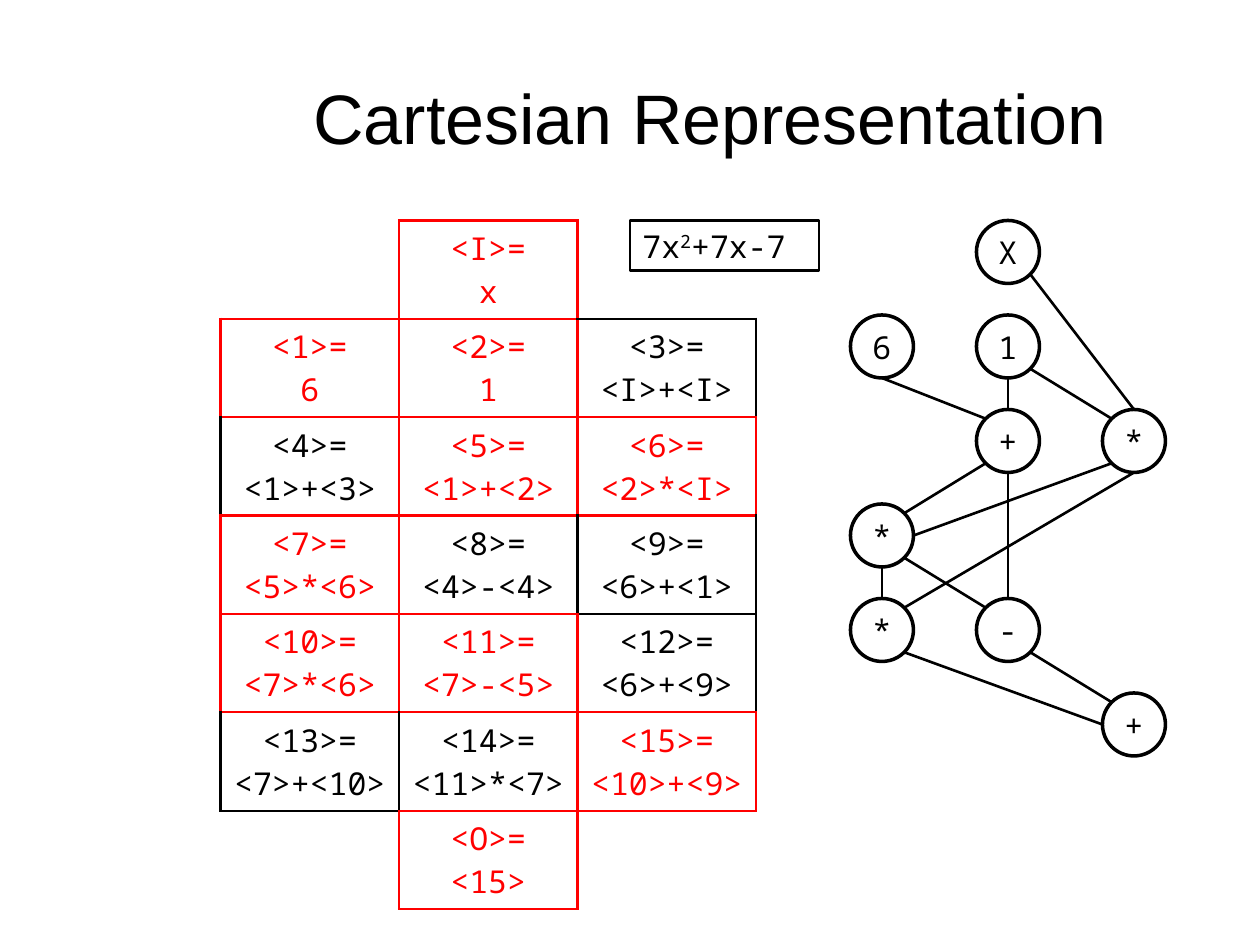
from dataclasses import dataclass
from math import sqrt

from lxml.etree import SubElement
from pptx import Presentation
from pptx.dml.color import RGBColor
from pptx.enum.shapes import MSO_CONNECTOR, MSO_SHAPE
from pptx.enum.text import MSO_ANCHOR, PP_ALIGN
from pptx.oxml.ns import qn
from pptx.util import Inches, Pt


@dataclass(frozen=True)
class Theme:
    ink: RGBColor = RGBColor(0, 0, 0)
    active: RGBColor = RGBColor(255, 0, 0)
    paper: RGBColor = RGBColor(255, 255, 255)
    title_font: str = "Arial"
    code_font: str = "Noto Sans Mono"
    title_size: Pt = Pt(40)
    code_size: Pt = Pt(18)
    thin: Pt = Pt(1.5)
    thick: Pt = Pt(2)


THEME = Theme()

ACTIVE_NODES = {"I", "1", "2", "5", "6", "7", "10", "11", "15", "O"}
GRID = [
    [None, ("I", "x"), None],
    [("1", "6"), ("2", "1"), ("3", "<I>+<I>")],
    [("4", "<1>+<3>"), ("5", "<1>+<2>"), ("6", "<2>*<I>")],
    [("7", "<5>*<6>"), ("8", "<4>-<4>"), ("9", "<6>+<1>")],
    [("10", "<7>*<6>"), ("11", "<7>-<5>"), ("12", "<6>+<9>")],
    [("13", "<7>+<10>"), ("14", "<11>*<7>"), ("15", "<10>+<9>")],
    [None, ("O", "<15>"), None],
]
# Border tag and the (row, column) step to the neighbour it is shared with
SIDES = {"a:lnL": (0, -1), "a:lnR": (0, 1), "a:lnT": (-1, 0), "a:lnB": (1, 0)}

# Node name: (symbol, column, row)
GRAPH_NODES = {
    "input": ("X", 1, 0), "six": ("6", 0, 1), "one": ("1", 1, 1),
    "sum": ("+", 1, 2), "scaled": ("*", 2, 2), "product": ("*", 0, 3),
    "power": ("*", 0, 4), "difference": ("-", 1, 4), "output": ("+", 2, 5),
}
# Start node and side, end node and side, sides as compass points
GRAPH_EDGES = [
    ("input", "SE", "scaled", "N"), ("one", "S", "sum", "N"),
    ("six", "S", "sum", "NW"), ("one", "SE", "scaled", "NW"),
    ("sum", "SW", "product", "NE"), ("scaled", "SW", "product", "E"),
    ("product", "S", "power", "N"), ("scaled", "S", "power", "NE"),
    ("product", "SE", "difference", "NW"), ("sum", "S", "difference", "N"),
    ("difference", "SE", "output", "NW"), ("power", "SE", "output", "W"),
]


def format_code(para, color=THEME.ink, align=PP_ALIGN.CENTER):
    para.alignment = align
    for span in para.runs:
        span.font.name = THEME.code_font
        span.font.size = THEME.code_size
        span.font.bold = False
        span.font.color.rgb = color


def add_outlined(page, kind, box, width):
    shape = page.shapes.add_shape(kind, *box)
    shape.shadow.inherit = False
    shape.line.color.rgb = THEME.ink
    shape.line.width = width
    return shape


def place_title(page, box):
    title = page.shapes.title
    title.left, title.top, title.width, title.height = box
    frame = title.text_frame
    frame.text = "Cartesian Representation"
    frame.vertical_anchor = MSO_ANCHOR.MIDDLE
    para = frame.paragraphs[0]
    para.alignment = PP_ALIGN.CENTER
    font = para.runs[0].font
    font.name, font.size = THEME.title_font, THEME.title_size
    font.color.rgb = THEME.ink


def entry_color(row, column):
    """Colour of a grid entry, or None for an empty place or one outside."""
    if not (0 <= row < len(GRID) and 0 <= column < len(GRID[0])):
        return None
    entry = GRID[row][column]
    if entry is None:
        return None
    return THEME.active if entry[0] in ACTIVE_NODES else THEME.ink


def add_borders(cell, row, column):
    """Shared borders are red beside an active node, otherwise black."""
    for tag, (down, right) in SIDES.items():
        colors = (entry_color(row, column), entry_color(row + down, column + right))
        line = SubElement(cell._tc.get_or_add_tcPr(), qn(tag), w=str(THEME.thin))
        if not any(colors):
            SubElement(line, qn("a:noFill"))
            continue
        color = THEME.active if THEME.active in colors else THEME.ink
        fill = SubElement(line, qn("a:solidFill"))
        SubElement(fill, qn("a:srgbClr"), val=str(color))


def place_grid(page, box):
    table = page.shapes.add_table(len(GRID), len(GRID[0]), *box).table
    table.first_row = table.horz_banding = False
    for row, entries in enumerate(GRID):
        for column, entry in enumerate(entries):
            cell = table.cell(row, column)
            add_borders(cell, row, column)
            cell.fill.background()
            cell.vertical_anchor = MSO_ANCHOR.MIDDLE
            if entry:
                name, value = entry
                cell.text_frame.text = f"<{name}>=\n{value}"
                for para in cell.text_frame.paragraphs:
                    format_code(para, entry_color(row, column))


def place_formula(page, box):
    shape = add_outlined(page, MSO_SHAPE.RECTANGLE, box, THEME.thin)
    shape.fill.background()
    frame = shape.text_frame
    frame.vertical_anchor = MSO_ANCHOR.TOP
    para = frame.paragraphs[0]
    for text in ("7x", "2", "+7x-7"):
        para.add_run().text = text
    format_code(para, align=PP_ALIGN.LEFT)
    para.runs[1]._r.get_or_add_rPr().set("baseline", "30000")


def rim_point(node, side):
    """Point on a circle's edge in a compass direction."""
    across = ("E" in side) - ("W" in side)
    down = ("S" in side) - ("N" in side)
    reach = node.width / 2 / sqrt(len(side))
    return (int(node.left + node.width / 2 + across * reach),
            int(node.top + node.height / 2 + down * reach))


def place_graph(page, box):
    left, top, width, height = box
    size = Inches(0.5)
    column_step = (width - size) // 2
    row_step = (height - size) // 5
    nodes = {}
    for name, (symbol, column, row) in GRAPH_NODES.items():
        spot = (left + column * column_step, top + row * row_step, size, size)
        node = nodes[name] = add_outlined(page, MSO_SHAPE.OVAL, spot, THEME.thick)
        node.fill.solid()
        node.fill.fore_color.rgb = THEME.paper
        frame = node.text_frame
        frame.margin_left = frame.margin_right = 0
        frame.margin_top = frame.margin_bottom = 0
        frame.vertical_anchor = MSO_ANCHOR.MIDDLE
        frame.text = symbol
        format_code(frame.paragraphs[0])
    for start, start_side, end, end_side in GRAPH_EDGES:
        edge = page.shapes.add_connector(
            MSO_CONNECTOR.STRAIGHT,
            *rim_point(nodes[start], start_side), *rim_point(nodes[end], end_side))
        edge.line.color.rgb = THEME.ink
        edge.line.width = THEME.thin
        SubElement(edge._element.spPr, qn("a:effectLst"))


def main():
    deck = Presentation()
    deck.slide_width, deck.slide_height = Inches(10), Inches(7.5)
    page = deck.slides.add_slide(deck.slide_layouts[5])
    place_title(page, (Inches(1.77), Inches(0.3), Inches(7.73), Inches(1.25)))
    place_grid(page, (Inches(1.75), Inches(1.75), Inches(4.25), Inches(4.9)))
    place_formula(page, (Inches(5), Inches(1.75), Inches(1.5), Inches(0.4)))
    place_graph(page, (Inches(6.75), Inches(1.75), Inches(2.5), Inches(4.25)))
    deck.save("out.pptx")


if __name__ == "__main__":
    main()
